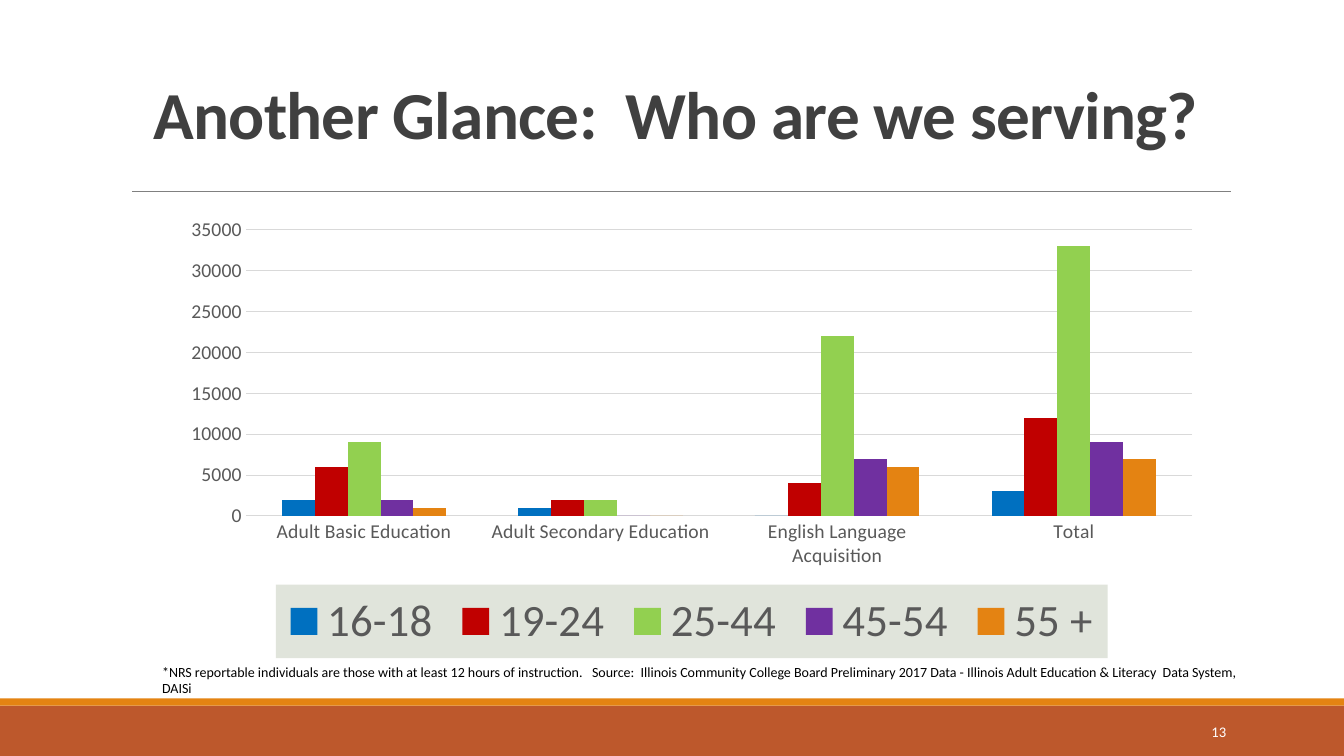
from lxml.etree import SubElement
from pptx import Presentation
from pptx.chart.data import CategoryChartData
from pptx.dml.color import RGBColor
from pptx.enum.chart import XL_CHART_TYPE, XL_LEGEND_POSITION, XL_TICK_MARK
from pptx.enum.shapes import MSO_CONNECTOR, MSO_SHAPE
from pptx.enum.text import MSO_ANCHOR, PP_ALIGN
from pptx.oxml import parse_xml
from pptx.oxml.ns import nsdecls, qn
from pptx.util import Inches, Pt

FONT = "Calibri"
RUST = RGBColor(0xBD, 0x58, 0x2C)
ORANGE = RGBColor(0xE4, 0x83, 0x12)
RULE_GRAY = RGBColor(0x80, 0x80, 0x80)
TITLE_GRAY = RGBColor(0x40, 0x40, 0x40)
LABEL_GRAY = RGBColor(0x59, 0x59, 0x59)
GRID_GRAY = RGBColor(0xD9, 0xD9, 0xD9)
LEGEND_FILL = RGBColor(0xE0, 0xE4, 0xDB)
BLACK = RGBColor(0, 0, 0)
WHITE = RGBColor(0xFF, 0xFF, 0xFF)

PROGRAMS = ["Adult Basic Education", "Adult Secondary Education",
            "English Language Acquisition", "Total"]
AGE_GROUPS = [
    ("16-18", (2000, 1000, 0, 3000), RGBColor(0x00, 0x70, 0xC0)),
    ("19-24", (6000, 2000, 4000, 12000), RGBColor(0xC0, 0x00, 0x00)),
    ("25-44", (9000, 2000, 22000, 33000), RGBColor(0x92, 0xD0, 0x50)),
    ("45-54", (2000, 0, 7000, 9000), RGBColor(0x70, 0x30, 0xA0)),
    ("55 +", (1000, 0, 6000, 7000), ORANGE),
]
FOOTNOTE = ("*NRS reportable individuals are those with at least 12 hours of instruction.   "
            "Source:  Illinois Community College Board Preliminary 2017 Data - "
            "Illinois Adult Education & Literacy  Data System, DAISi")


def style_font(font, size, color, bold=False):
    font.name = FONT
    font.size = Pt(size)
    font.color.rgb = color
    font.bold = bold


def add_band(slide, top, height, color):
    band = slide.shapes.add_shape(MSO_SHAPE.RECTANGLE, 0, Inches(top),
                                  Inches(13.33), Inches(height))
    band.shadow.inherit = False
    band.fill.solid()
    band.fill.fore_color.rgb = color
    band.line.fill.background()


def add_rule(slide, left, right, top):
    rule = slide.shapes.add_connector(MSO_CONNECTOR.STRAIGHT, Inches(left), Inches(top),
                                      Inches(right), Inches(top))
    rule.line.color.rgb = RULE_GRAY
    rule.line.width = Pt(0.5)
    SubElement(rule._element.spPr, qn("a:effectLst"))


def set_title(slide, text):
    title = slide.shapes.title
    title.left, title.top = Inches(1.2), Inches(0.31)
    title.width, title.height = Inches(11), Inches(1.26)
    frame = title.text_frame
    frame.text = text
    frame.vertical_anchor = MSO_ANCHOR.BOTTOM
    paragraph = frame.paragraphs[0]
    paragraph.alignment = PP_ALIGN.CENTER
    paragraph.line_spacing = 0.85
    run = paragraph.runs[0]
    style_font(run.font, 48, TITLE_GRAY, bold=True)
    run.font._element.set("spc", "-50")


def add_text(slide, text, left, top, width, height, size, color,
             align=PP_ALIGN.LEFT, anchor=MSO_ANCHOR.TOP):
    box = slide.shapes.add_textbox(Inches(left), Inches(top), Inches(width), Inches(height))
    frame = box.text_frame
    frame.word_wrap = True
    frame.vertical_anchor = anchor
    frame.text = text
    paragraph = frame.paragraphs[0]
    paragraph.alignment = align
    style_font(paragraph.runs[0].font, size, color)


def style_axis(axis):
    axis.major_tick_mark = XL_TICK_MARK.NONE
    axis.minor_tick_mark = XL_TICK_MARK.NONE
    style_font(axis.tick_labels.font, 14, LABEL_GRAY)


def style_line(line):
    line.color.rgb = GRID_GRAY
    line.width = Pt(0.75)


def add_legend(chart):
    chart.has_legend = True
    legend = chart.legend
    legend.position = XL_LEGEND_POSITION.BOTTOM
    legend.include_in_layout = False
    style_font(legend.font, 32, LABEL_GRAY)
    legend._element.find(qn("c:txPr")).addprevious(parse_xml(
        f'<c:spPr {nsdecls("c", "a")}><a:solidFill><a:srgbClr val="{LEGEND_FILL}"/>'
        '</a:solidFill></c:spPr>'))


def add_age_chart(slide):
    data = CategoryChartData()
    data.categories = PROGRAMS
    for name, learners, _ in AGE_GROUPS:
        data.add_series(name, learners)
    chart = slide.shapes.add_chart(XL_CHART_TYPE.COLUMN_CLUSTERED, Inches(1.69), Inches(2.07),
                                   Inches(10.34), Inches(4.46), data).chart
    chart.has_title = False
    style_font(chart.font, 10, BLACK)

    plot = chart.plots[0]
    plot.vary_by_categories = False
    plot.gap_width = 219
    plot.overlap = 0
    for series, (_, _, color) in zip(plot.series, AGE_GROUPS):
        series.format.fill.solid()
        series.format.fill.fore_color.rgb = color

    style_axis(chart.category_axis)
    style_line(chart.category_axis.format.line)
    learners_axis = chart.value_axis
    style_axis(learners_axis)
    learners_axis.minimum_scale = 0
    learners_axis.maximum_scale = 35000
    learners_axis.major_unit = 5000
    learners_axis.format.line.fill.background()
    style_line(learners_axis.major_gridlines.format.line)

    add_legend(chart)


def main():
    deck = Presentation()
    deck.slide_width, deck.slide_height = Inches(13.33), Inches(7.5)
    slide = deck.slides.add_slide(deck.slide_layouts[5])
    add_band(slide, 7, 0.5, RUST)
    add_band(slide, 6.93, 0.07, ORANGE)
    add_rule(slide, 1.31, 12.21, 1.9)
    set_title(slide, "Another Glance:  Who are we serving?")
    add_age_chart(slide)
    add_text(slide, FOOTNOTE, 1.51, 6.53, 10.87, 0.44, 10, BLACK)
    add_text(slide, "13", 10.83, 7.06, 1.43, 0.4, 10.5, WHITE,
             PP_ALIGN.RIGHT, MSO_ANCHOR.MIDDLE)
    deck.save("out.pptx")


if __name__ == "__main__":
    main()
